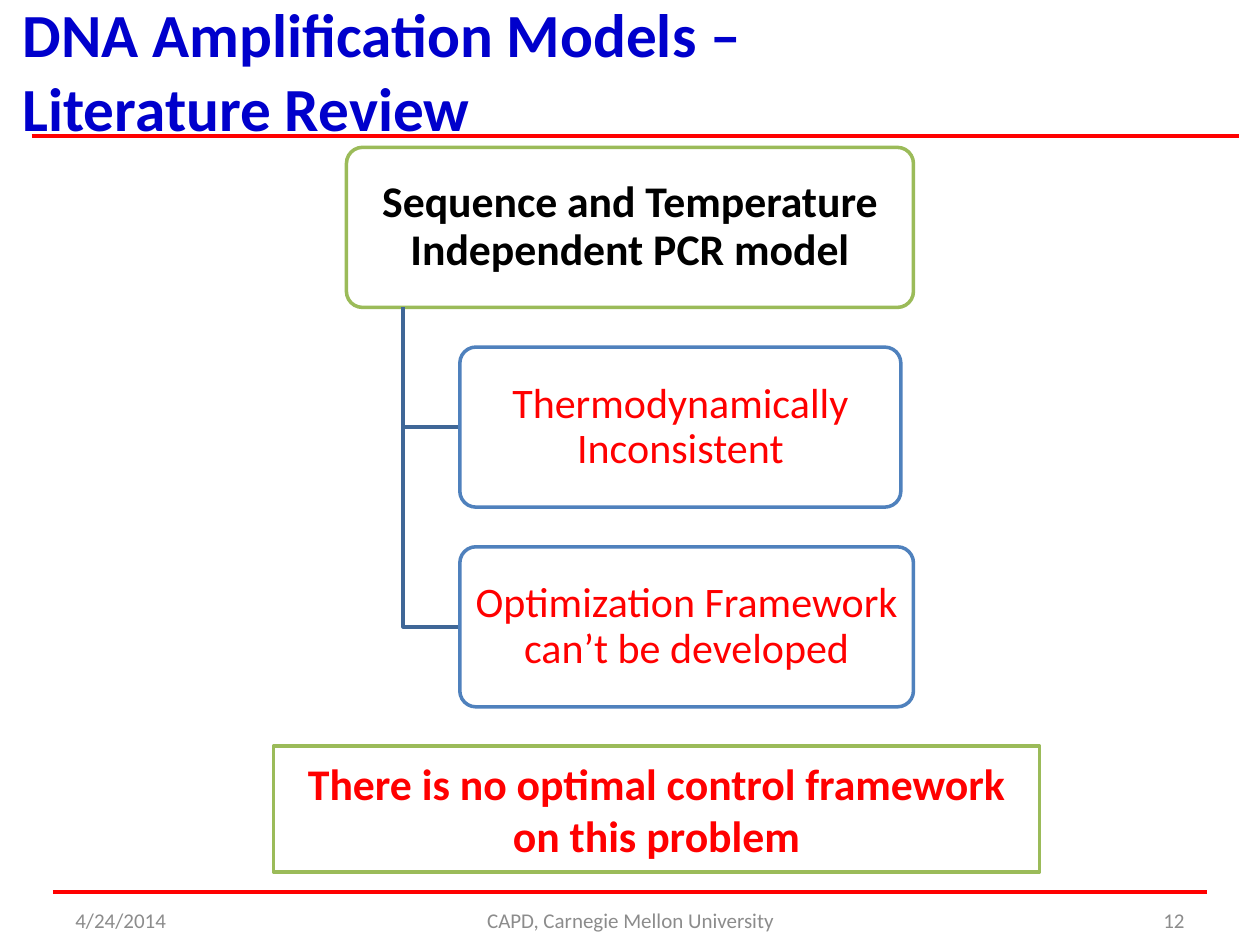
from pptx import Presentation
from pptx import util as u
from pptx.dml.color import RGBColor
from pptx.enum import shapes, text
from pptx.oxml.ns import qn
from lxml import etree

TITLE = "DNA Amplification Models – Literature Review"
MODEL = "Sequence and Temperature Independent PCR model"
DRAWBACKS = [
    ("Thermodynamically Inconsistent", 3.5),
    ("Optimization Framework can’t be developed", 3.6),
]
CONCLUSION = "There is no optimal control framework on this problem"
FOOTERS = [
    ("4/24/2014", 0.5, 2.33, text.PP_ALIGN.LEFT),
    ("CAPD, Carnegie Mellon University", 3.42, 3.17, text.PP_ALIGN.CENTER),
    ("12", 7.17, 2.33, text.PP_ALIGN.RIGHT),
]
RULES = [(0.25, 9.83, 1.08), (0.42, 9.58, 7.08)]

RED, GREEN, BLUE, WHITE = "FF0000", "9BBB59", "4F81BD", "FFFFFF"
MODEL_LEFT, MODEL_TOP, MODEL_WIDTH = 2.75, 1.17, 4.5
NODE_HEIGHT, NODE_STEP = 1.27, 1.585
TRUNK_X, DRAWBACK_LEFT = 3.2, 3.65


def rgb(color):
    return RGBColor.from_string(color)


def write(shape, wording, size, color, bold=False, align=text.PP_ALIGN.CENTER,
          anchor=text.MSO_ANCHOR.MIDDLE):
    frame = shape.text_frame
    frame.word_wrap = True
    frame.vertical_anchor = anchor
    frame.text = wording
    paragraph = frame.paragraphs[0]
    paragraph.alignment = align
    font = paragraph.font
    font.name, font.size, font.bold = "Calibri", u.Pt(size), bold
    font.color.rgb = rgb(color)
    return frame


def outline(shape, color, width=2):
    shape.line.color.rgb = rgb(color)
    shape.line.width = u.Pt(width)


def add_box(slide, kind, left, top, width, height, border):
    box = slide.shapes.add_shape(kind, *map(u.Inches, (left, top, width, height)))
    box.shadow.inherit = False
    box.fill.solid()
    box.fill.fore_color.rgb = rgb(WHITE)
    outline(box, border)
    return box


def add_node(slide, wording, left, top, width, border, size, color, bold=False):
    node = add_box(slide, shapes.MSO_SHAPE.ROUNDED_RECTANGLE,
                   left, top, width, NODE_HEIGHT, border)
    node.adjustments[0] = 0.1
    frame = write(node, wording, size, color, bold)
    frame.margin_left = frame.margin_right = u.Inches(0.05)
    frame.margin_top = frame.margin_bottom = u.Inches(0.03)
    frame.paragraphs[0].line_spacing = 0.9


def add_branch(slide, start_y, end_y):
    points = [(u.Inches(x), u.Inches(y)) for x, y in
              [(TRUNK_X, start_y), (TRUNK_X, end_y), (DRAWBACK_LEFT, end_y)]]
    builder = slide.shapes.build_freeform(*points[0])
    builder.add_line_segments(points[1:], close=False)
    branch = builder.convert_to_shape()
    branch.shadow.inherit = False
    branch.fill.background()
    outline(branch, "3F6797")


def add_rule(slide, start_x, end_x, y):
    rule = slide.shapes.add_connector(
        shapes.MSO_CONNECTOR.STRAIGHT, *map(u.Inches, (start_x, y, end_x, y)))
    outline(rule, RED, 2.25)
    etree.SubElement(rule.element.spPr, qn("a:effectLst"))


def main():
    deck = Presentation()
    deck.slide_width, deck.slide_height = u.Inches(10), u.Inches(7.5)
    slide = deck.slides.add_slide(deck.slide_layouts[5])

    for rule in RULES:
        add_rule(slide, *rule)

    for wording, left, width, align in FOOTERS:
        footer = slide.shapes.add_textbox(*map(u.Inches, (left, 7.1, width, 0.4)))
        write(footer, wording, 12, "8C8C8C", align=align)

    conclusion = add_box(slide, shapes.MSO_SHAPE.RECTANGLE, 2.17, 5.92, 6.08, 1, GREEN)
    write(conclusion, CONCLUSION, 25, RED, bold=True)

    add_node(slide, MODEL, MODEL_LEFT, MODEL_TOP, MODEL_WIDTH, GREEN, 25, "000000", True)
    for row, (wording, width) in enumerate(DRAWBACKS, start=1):
        top = MODEL_TOP + row * NODE_STEP
        add_branch(slide, MODEL_TOP + NODE_HEIGHT, top + NODE_HEIGHT / 2)
        add_node(slide, wording, DRAWBACK_LEFT, top, width, BLUE, 24, RED)

    title = slide.shapes.title
    title.left, title.top, title.width, title.height = map(
        u.Inches, (0.08, -0.08, 7.75, 1.28))
    frame = write(title, TITLE, 35, "0000CC", True,
                  text.PP_ALIGN.LEFT, text.MSO_ANCHOR.TOP)
    frame.auto_size = text.MSO_AUTO_SIZE.SHAPE_TO_FIT_TEXT

    deck.save("out.pptx")


if __name__ == "__main__":
    main()
